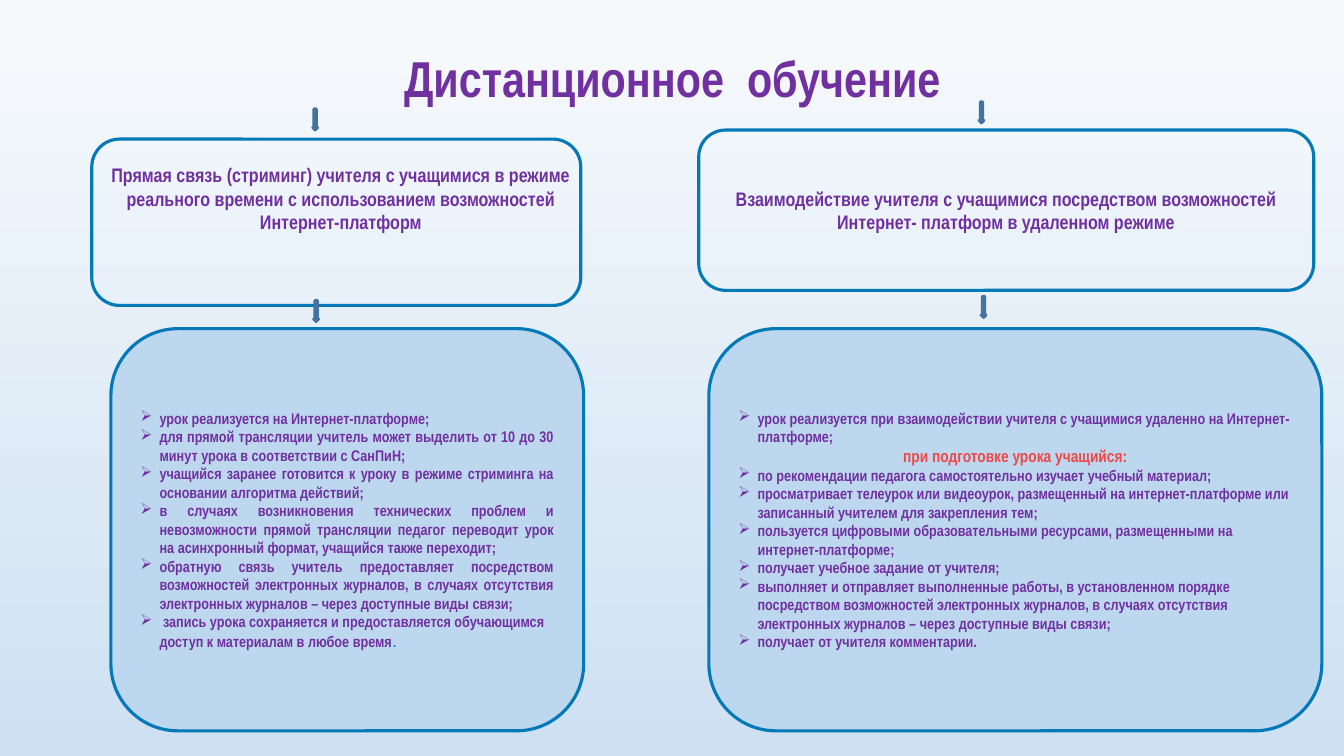
from dataclasses import dataclass
from typing import Optional

from lxml.etree import SubElement
from pptx import Presentation
from pptx.dml.color import RGBColor
from pptx.enum.shapes import MSO_SHAPE
from pptx.enum.text import MSO_ANCHOR, PP_ALIGN
from pptx.oxml.ns import qn
from pptx.util import Inches, Pt

SLIDE_WIDTH, SLIDE_HEIGHT = Inches(13.33), Inches(7.5)


@dataclass(frozen=True)
class Theme:
    font: str = "Arial Narrow"
    stop_font: str = "Arial"
    title_size: float = 36
    header_size: float = 14
    subheading_size: float = 12
    body_size: float = 11
    outline_width: float = 2.25
    arrow_width: float = 2
    text: str = "7030A0"
    accent: str = "EE4848"
    stop: str = "0070C0"
    outline: str = "0379B7"
    panel: str = "BDD7EE"
    arrow: str = "5B9BD5"
    arrow_line: str = "43739E"
    sky_top: str = "F7FAFD"
    sky_bottom: str = "CEE1F2"


THEME = Theme()


@dataclass(frozen=True)
class Area:
    """Left, top, width and height in percent of the slide."""
    left: float
    top: float
    width: float
    height: float

    def lengths(self) -> tuple[int, int, int, int]:
        return (int(SLIDE_WIDTH * self.left / 100), int(SLIDE_HEIGHT * self.top / 100),
                int(SLIDE_WIDTH * self.width / 100), int(SLIDE_HEIGHT * self.height / 100))


@dataclass(frozen=True)
class Line:
    text: str
    size: float = THEME.body_size
    color: str = THEME.text
    align: PP_ALIGN = PP_ALIGN.LEFT
    bullet: bool = True
    full_stop: bool = False


@dataclass(frozen=True)
class Panel:
    area: Area
    fill: Optional[str] = None
    lines: tuple[Line, ...] = ()


def centered(text: str, size: float, color: str = THEME.text) -> Line:
    return Line(text, size, color, PP_ALIGN.CENTER, bullet=False)


def justified(text: str) -> Line:
    return Line(text, align=PP_ALIGN.JUSTIFY)


TITLE = centered("Дистанционное  обучение", THEME.title_size)
STREAMING = centered(
    "Прямая связь (стриминг) учителя с учащимися в режиме реального времени "
    "с использованием возможностей Интернет-платформ", THEME.header_size)
REMOTE = centered(
    "Взаимодействие учителя с учащимися посредством возможностей "
    "Интернет- платформ в удаленном режиме", THEME.header_size)

STREAMING_DETAILS = (
    justified("урок реализуется на Интернет-платформе;"),
    justified("для прямой трансляции учитель может выделить от 10 до 30 минут урока "
              "в соответствии с СанПиН;"),
    justified("учащийся заранее готовится к уроку в режиме стриминга на основании "
              "алгоритма действий;"),
    justified("в случаях возникновения технических проблем и невозможности прямой трансляции "
              "педагог переводит урок на асинхронный формат, учащийся также переходит;"),
    justified("обратную связь учитель предоставляет посредством возможностей электронных "
              "журналов, в случаях отсутствия электронных журналов – через доступные виды связи;"),
    Line(" запись урока сохраняется и предоставляется обучающимся доступ к материалам "
         "в любое время", full_stop=True),
)
REMOTE_DETAILS = (
    Line("урок реализуется при взаимодействии учителя с учащимися удаленно "
         "на Интернет-платформе;"),
    centered("при подготовке урока учащийся:", THEME.subheading_size, THEME.accent),
    Line("по рекомендации педагога самостоятельно изучает учебный материал;"),
    Line("просматривает телеурок или видеоурок, размещенный на интернет-платформе "
         "или записанный учителем для закрепления тем;"),
    Line("пользуется цифровыми образовательными ресурсами, размещенными на "
         "интернет-платформе;"),
    Line("получает учебное задание от учителя;"),
    Line("выполняет и отправляет выполненные работы, в установленном порядке посредством "
         "возможностей электронных журналов, в случаях отсутствия электронных журналов – "
         "через доступные виды связи;"),
    Line("получает от учителя комментарии."),
)

HEADER_PANELS = (
    Panel(Area(6.83, 18.4, 36.38, 22)),
    Panel(Area(51.99, 17.2, 45.76, 21.2), lines=(REMOTE,)),
)
DETAIL_PANELS = (
    Panel(Area(8.25, 43.47, 35.18, 53.2), THEME.panel, STREAMING_DETAILS),
    Panel(Area(52.74, 43.47, 45.61, 53.2), THEME.panel, REMOTE_DETAILS),
)
TITLE_AREA = Area(21.83, 5.6, 56.41, 9.47)
STREAMING_AREA = Area(7.28, 20.93, 36.16, 13.87)
ARROW_POSITIONS = ((23.26, 14.4), (72.84, 13.47), (23.33, 39.73), (72.99, 39.2))
ARROW_SIZE = (0.38, 2.8)


def rgb(color: str) -> RGBColor:
    return RGBColor.from_string(color)


def set_font(font, name: str, size: float, color: str, bold: bool) -> None:
    font.name, font.size, font.bold = name, Pt(size), bold
    font.color.rgb = rgb(color)


def add_bullet(paragraph) -> None:
    properties = paragraph._p.get_or_add_pPr()
    properties.set("marL", str(Inches(0.19)))
    properties.set("indent", str(-Inches(0.19)))
    bullet = SubElement(properties, qn("a:buChar"))
    bullet.set("char", "➢")


def write_lines(text_frame, lines: tuple[Line, ...]) -> None:
    text_frame.word_wrap = True
    for index, line in enumerate(lines):
        paragraph = text_frame.add_paragraph() if index else text_frame.paragraphs[0]
        paragraph.alignment = line.align
        if line.bullet:
            add_bullet(paragraph)
        set_font(paragraph.font, THEME.font, line.size, line.color, True)
        paragraph.add_run().text = line.text
        if line.full_stop:
            stop = paragraph.add_run()
            stop.text = "."
            set_font(stop.font, THEME.stop_font, THEME.subheading_size, THEME.stop, False)


def add_figure(slide, kind: MSO_SHAPE, area: Area, fill: Optional[str],
               line_color: str, line_width: float):
    shape = slide.shapes.add_shape(kind, *area.lengths())
    shape.shadow.inherit = False
    if fill:
        shape.fill.solid()
        shape.fill.fore_color.rgb = rgb(fill)
    else:
        shape.fill.background()
    shape.line.color.rgb = rgb(line_color)
    shape.line.width = Pt(line_width)
    return shape


def add_panel(slide, panel: Panel) -> None:
    shape = add_figure(slide, MSO_SHAPE.ROUNDED_RECTANGLE, panel.area, panel.fill,
                       THEME.outline, THEME.outline_width)
    shape.text_frame.vertical_anchor = MSO_ANCHOR.MIDDLE
    write_lines(shape.text_frame, panel.lines)


def add_caption(slide, area: Area, line: Line) -> None:
    write_lines(slide.shapes.add_textbox(*area.lengths()).text_frame, (line,))


def paint_background(slide) -> None:
    fill = slide.background.fill
    fill.gradient()
    fill.gradient_angle = 270
    for stop, color in zip(fill.gradient_stops, (THEME.sky_top, THEME.sky_bottom)):
        stop.color.rgb = rgb(color)


def main() -> None:
    presentation = Presentation()
    presentation.slide_width, presentation.slide_height = SLIDE_WIDTH, SLIDE_HEIGHT
    slide = presentation.slides.add_slide(presentation.slide_layouts[6])
    paint_background(slide)

    # Title and the two forms of learning
    add_caption(slide, TITLE_AREA, TITLE)
    for panel in HEADER_PANELS:
        add_panel(slide, panel)
    add_caption(slide, STREAMING_AREA, STREAMING)

    # Details of each form
    for panel in DETAIL_PANELS:
        add_panel(slide, panel)

    # Arrows from the title to the headers and on to the details
    for position in ARROW_POSITIONS:
        add_figure(slide, MSO_SHAPE.DOWN_ARROW, Area(*position, *ARROW_SIZE), THEME.arrow,
                   THEME.arrow_line, THEME.arrow_width)

    presentation.save("out.pptx")


if __name__ == "__main__":
    main()
